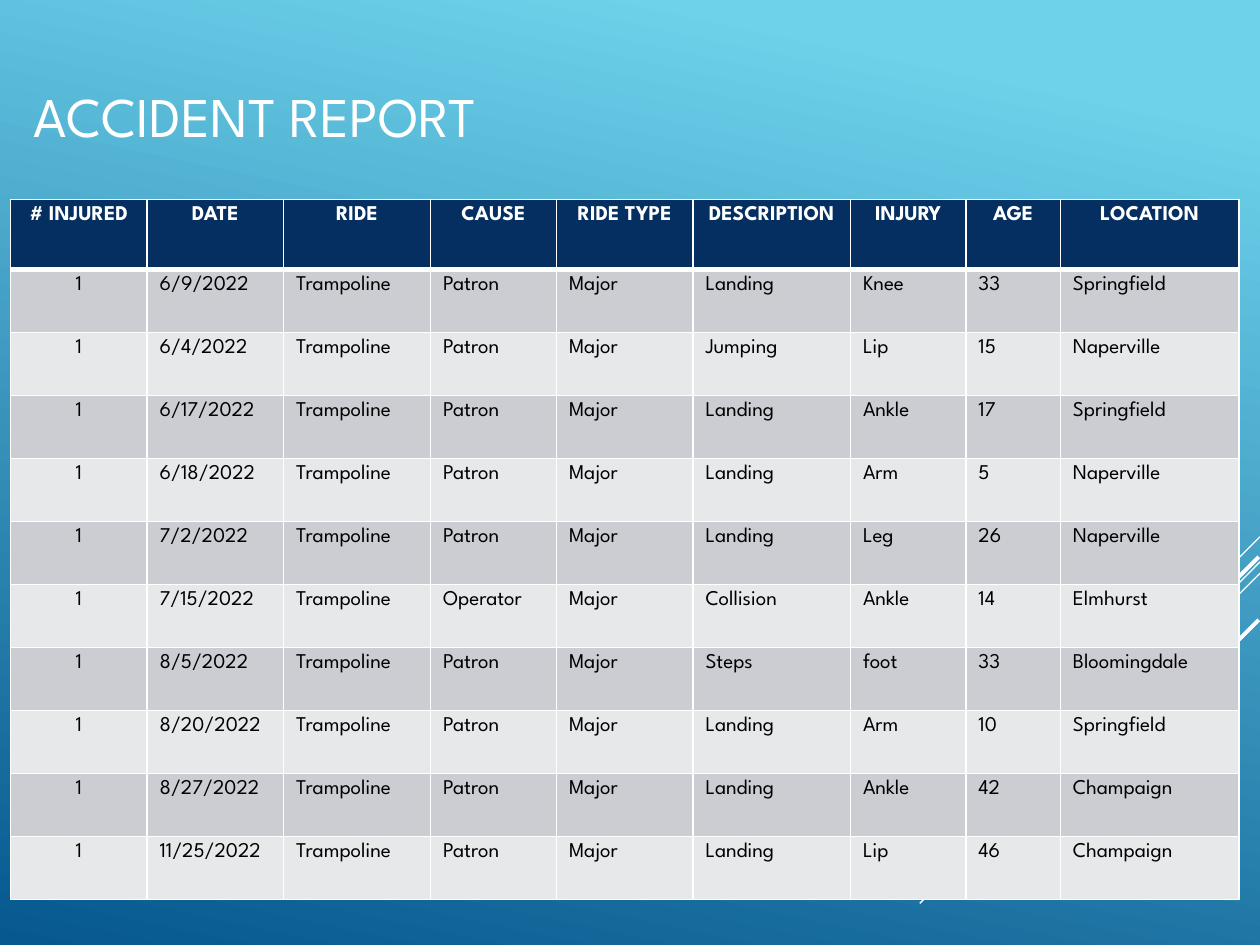
from lxml.etree import SubElement as Sub
from pptx import Presentation
from pptx.dml.color import RGBColor as RGB
from pptx.enum.shapes import MSO_CONNECTOR as Link
from pptx.enum.text import MSO_ANCHOR as Anchor, PP_ALIGN as Align
from pptx.oxml.ns import qn
from pptx.util import Pt

FONT = "League Spartan"
HEX = {
    "sky": "6ED2EB",
    "sea": "06588E",
    "white": "FFFFFF",
    "black": "000000",
    "navy": "052F61",
    "dark": "CCCDD2",
    "light": "E7E8EA",
}

# x1, y1, x2, y2, width
RAYS = [
    (720, 306.7, 660.2, 366.5, 0.75),
    (720, 321.1, 525.6, 516.2, 0.75),
    (720, 327.6, 596.2, 451.4, 0.75),
    (719.3, 318.2, 606.2, 431.3, 2.25),
    (719.3, 354.2, 637.2, 436.3, 2.25),
]

WIDTHS = [78, 78, 84, 72, 78, 90, 66, 54, 102]
HEAD_H, ROW_H = 40, 36
HEAD = ["# INJURED", "DATE", "RIDE", "CAUSE", "RIDE TYPE",
        "DESCRIPTION", "INJURY", "AGE", "LOCATION"]
# Date, cause, description, injury, age, location
CASES = [
    ("6/9/2022", "Patron", "Landing", "Knee", "33", "Springfield"),
    ("6/4/2022", "Patron", "Jumping", "Lip", "15", "Naperville"),
    ("6/17/2022", "Patron", "Landing", "Ankle", "17", "Springfield"),
    ("6/18/2022", "Patron", "Landing", "Arm", "5", "Naperville"),
    ("7/2/2022", "Patron", "Landing", "Leg", "26", "Naperville"),
    ("7/15/2022", "Operator", "Collision", "Ankle", "14", "Elmhurst"),
    ("8/5/2022", "Patron", "Steps", "foot", "33", "Bloomingdale"),
    ("8/20/2022", "Patron", "Landing", "Arm", "10", "Springfield"),
    ("8/27/2022", "Patron", "Landing", "Ankle", "42", "Champaign"),
    ("11/25/2022", "Patron", "Landing", "Lip", "46", "Champaign"),
]


def color(name):
    return RGB.from_string(HEX[name])


def write(frame, text, size, ink, bold=False, align=Align.LEFT):
    para = frame.paragraphs[0]
    para.text = text
    para.alignment = align
    font = para.font
    font.name, font.size, font.bold = FONT, Pt(size), bold
    font.color.rgb = color(ink)


def paint_back(slide):
    fill = slide.background.fill
    fill.gradient()
    fill.gradient_angle = 258
    for stop, name, pos in zip(fill.gradient_stops, ("sky", "sea"), (0.1, 1)):
        stop.color.rgb = color(name)
        stop.position = pos


def add_ray(slide, x1, y1, x2, y2, width):
    ray = slide.shapes.add_connector(
        Link.STRAIGHT, Pt(x1), Pt(y1), Pt(x2), Pt(y2))
    ray.line.color.rgb = color("white")
    ray.line.width = Pt(width)
    Sub(ray._element.spPr, qn("a:effectLst"))


def add_title(slide, text):
    box = slide.shapes.add_textbox(Pt(12), Pt(6), Pt(516), Pt(120))
    frame = box.text_frame
    frame.word_wrap = True
    frame.vertical_anchor = Anchor.MIDDLE
    write(frame, text, 32, "white")


def add_edges(cell, top, base):
    """Draw white borders; must come before the cell's fill."""
    props = cell._tc.get_or_add_tcPr()
    for side, width in zip("LRTB", (1, 1, top, base)):
        edge = Sub(props, qn(f"a:ln{side}"), w=str(Pt(width)))
        fill = Sub(edge, qn("a:solidFill"))
        Sub(fill, qn("a:srgbClr"), val=HEX["white"])


def fill_cell(cell, text, row, col):
    head = row == 0
    add_edges(cell, 3 if row == 1 else 1, 3 if head else 1)
    cell.fill.solid()
    back = "navy" if head else ("light", "dark")[row % 2]
    cell.fill.fore_color.rgb = color(back)
    write(cell.text_frame, text, 12, "white" if head else "black", head,
          Align.CENTER if head or col == 0 else Align.LEFT)


def add_report(slide):
    rows = [HEAD]
    for date, cause, what, injury, age, town in CASES:
        rows.append(["1", date, "Trampoline", cause, "Major",
                     what, injury, age, town])
    height = HEAD_H + ROW_H * len(CASES)
    table = slide.shapes.add_table(
        len(rows), len(WIDTHS), Pt(6), Pt(114),
        Pt(sum(WIDTHS)), Pt(height)).table
    table.horz_banding = False
    for col, width in zip(table.columns, WIDTHS):
        col.width = Pt(width)
    for r, texts in enumerate(rows):
        table.rows[r].height = Pt(ROW_H if r else HEAD_H)
        for c, text in enumerate(texts):
            fill_cell(table.cell(r, c), text, r, c)


def main():
    deck = Presentation()
    deck.slide_width, deck.slide_height = Pt(720), Pt(540)
    slide = deck.slides.add_slide(deck.slide_layouts[6])
    paint_back(slide)
    for ray in RAYS:
        add_ray(slide, *ray)
    add_title(slide, "ACCIDENT REPORT")
    add_report(slide)
    deck.save("out.pptx")


if __name__ == "__main__":
    main()
